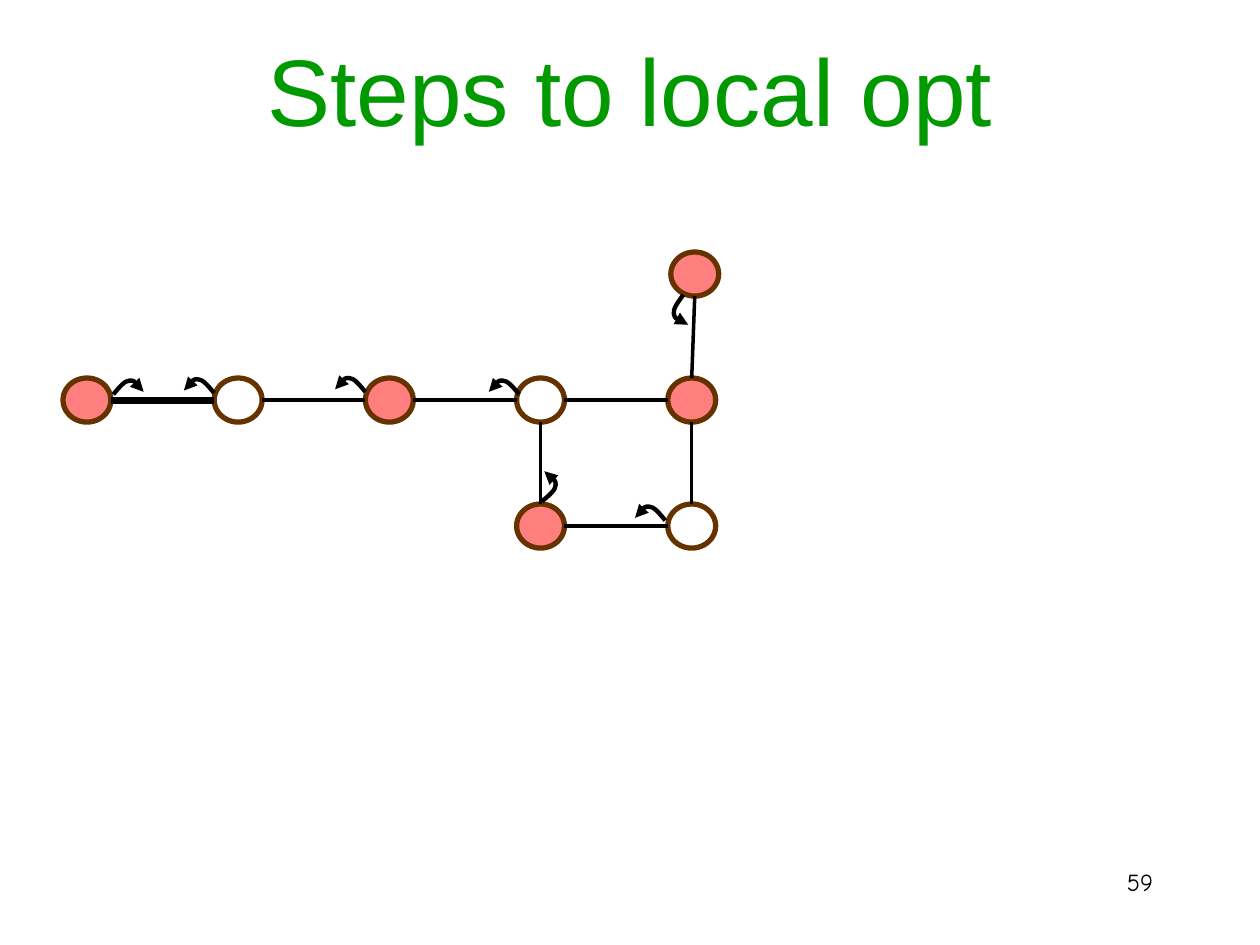
import math
import pptx
import pptx.util
import pptx.dml.color
import pptx.enum.shapes
import pptx.enum.text
import pptx.oxml.ns
import lxml.etree

Inches, Pt = pptx.util.Inches, pptx.util.Pt
qn = pptx.oxml.ns.qn
Align = pptx.enum.text.PP_ALIGN
Anchor = pptx.enum.text.MSO_ANCHOR

# Node size and grid step, in inches
WIDE, HIGH = 0.38, 0.35
STEP, DROP = 1.2, 1.0

# Name: (column, row, filled)
NODES = {
    "a": (0, 1, True), "b": (1, 1, False), "c": (2, 1, True),
    "d": (3, 1, False), "e": (4, 1, True), "f": (3, 2, True),
    "g": (4, 2, False), "h": (4.02, 0, True),
}
# From, side, to, side, width
EDGES = [
    ("a", "right", "b", "left", 4), ("b", "right", "c", "left", 2),
    ("c", "right", "d", "left", 2), ("d", "right", "e", "left", 2),
    ("d", "bottom", "f", "top", 2), ("g", "left", "f", "right", 2),
    ("e", "bottom", "g", "top", 2), ("h", "bottom", "e", "top", 2),
]
SIDES = {"top": (0.5, 0), "left": (0, 0.5), "bottom": (0.5, 1), "right": (1, 0.5)}

# Hook outline from its start: two curves, pointing left
HOOK = [(0, 0), (-0.05, -0.06), (-0.09, -0.11), (-0.13, -0.11),
        (-0.17, -0.11), (-0.21, -0.06), (-0.24, -0.02)]
# Node, start offset from its corner, turn in degrees, mirrored
MOVES = [
    ("c", 0, 0.11, 0, False), ("b", 0, 0.12, 0, False),
    ("a", 0.4, 0.13, 0, True), ("d", 0.02, 0.13, 0, False),
    ("f", 0.2, -0.02, 90, False), ("g", -0.02, 0.13, 0, False),
    ("h", 0.1, 0.34, 256, False),
]


def color(code):
    return pptx.dml.color.RGBColor.from_string(code)


def stroke(shape, code, width):
    shape.line.color.rgb = color(code)
    shape.line.width = Pt(width)


def add_text(slide, box, words, size, font, code, align, anchor):
    frame = slide.shapes.add_textbox(*map(Inches, box)).text_frame
    frame.word_wrap = True
    frame.vertical_anchor = anchor
    para = frame.paragraphs[0]
    para.alignment = align
    run = para.add_run()
    run.text = words
    run.font.size = Pt(size)
    run.font.name = font
    run.font.color.rgb = color(code)


def add_node(slide, left, top, filled):
    kind = pptx.enum.shapes.MSO_SHAPE.OVAL
    node = slide.shapes.add_shape(
        kind, Inches(left), Inches(top), Inches(WIDE), Inches(HIGH))
    node.shadow.inherit = False
    stroke(node, "663300", 3)
    if filled:
        node.fill.solid()
        node.fill.fore_color.rgb = color("FF0000")
        # Half transparent
        tint = next(node.fill._xPr.iter(qn("a:srgbClr")))
        lxml.etree.SubElement(tint, qn("a:alpha")).set("val", "50000")
    else:
        node.fill.background()


def add_edge(slide, start, end, width):
    kind = pptx.enum.shapes.MSO_CONNECTOR.STRAIGHT
    edge = slide.shapes.add_connector(kind, *map(Inches, start + end))
    stroke(edge, "000000", width)
    lxml.etree.SubElement(edge._element.spPr, qn("a:effectLst"))


def add_hook(slide, left, top, turn, flip):
    cos, sin = math.cos(math.radians(turn)), math.sin(math.radians(turn))
    sign = -1 if flip else 1
    points = [(Inches(left + sign * x * cos - y * sin),
               Inches(top + sign * x * sin + y * cos)) for x, y in HOOK]
    form = slide.shapes.build_freeform(*points[0])
    form.add_line_segments(points[1:], close=False)
    hook = form.convert_to_shape()
    hook.shadow.inherit = False
    hook.fill.background()
    stroke(hook, "000000", 2.5)
    # Turn each three straight steps into one curve
    lines = list(hook._element.iter(qn("a:lnTo")))
    route = lines[0].getparent()
    for first in (0, 3):
        curve = lxml.etree.SubElement(route, qn("a:cubicBezTo"))
        for line in lines[first:first + 3]:
            curve.append(line[0])
            route.remove(line)
    tail = lxml.etree.SubElement(hook.line._get_or_add_ln(), qn("a:tailEnd"))
    tail.set("type", "triangle")


def add_graph(slide, left, top):
    spots = {name: (left + col * STEP, top + row * DROP)
             for name, (col, row, _) in NODES.items()}

    def port(name, side):
        x, y = spots[name]
        across, down = SIDES[side]
        return (x + across * WIDE, y + down * HIGH)

    # Nodes
    for name, (_, _, filled) in NODES.items():
        add_node(slide, *spots[name], filled)
    # Edges
    for start, out, end, into, width in EDGES:
        add_edge(slide, port(start, out), port(end, into), width)
    # Steps
    for name, right, down, turn, flip in MOVES:
        x, y = spots[name]
        add_hook(slide, x + right, y + down, turn, flip)


def main():
    deck = pptx.Presentation()
    deck.slide_width, deck.slide_height = Inches(10), Inches(7.5)
    slide = deck.slides.add_slide(deck.slide_layouts[6])
    # Page number and title
    add_text(slide, (7.17, 6.83, 2.08, 0.5), "59", 14, "Comic Neue",
             "000000", Align.RIGHT, Anchor.TOP)
    add_text(slide, (0, 0.2, 10, 1.01), "Steps to local opt", 54, "Arial",
             "009900", Align.CENTER, Anchor.MIDDLE)
    add_graph(slide, 0.5, 2)
    deck.save("out.pptx")


if __name__ == "__main__":
    main()
